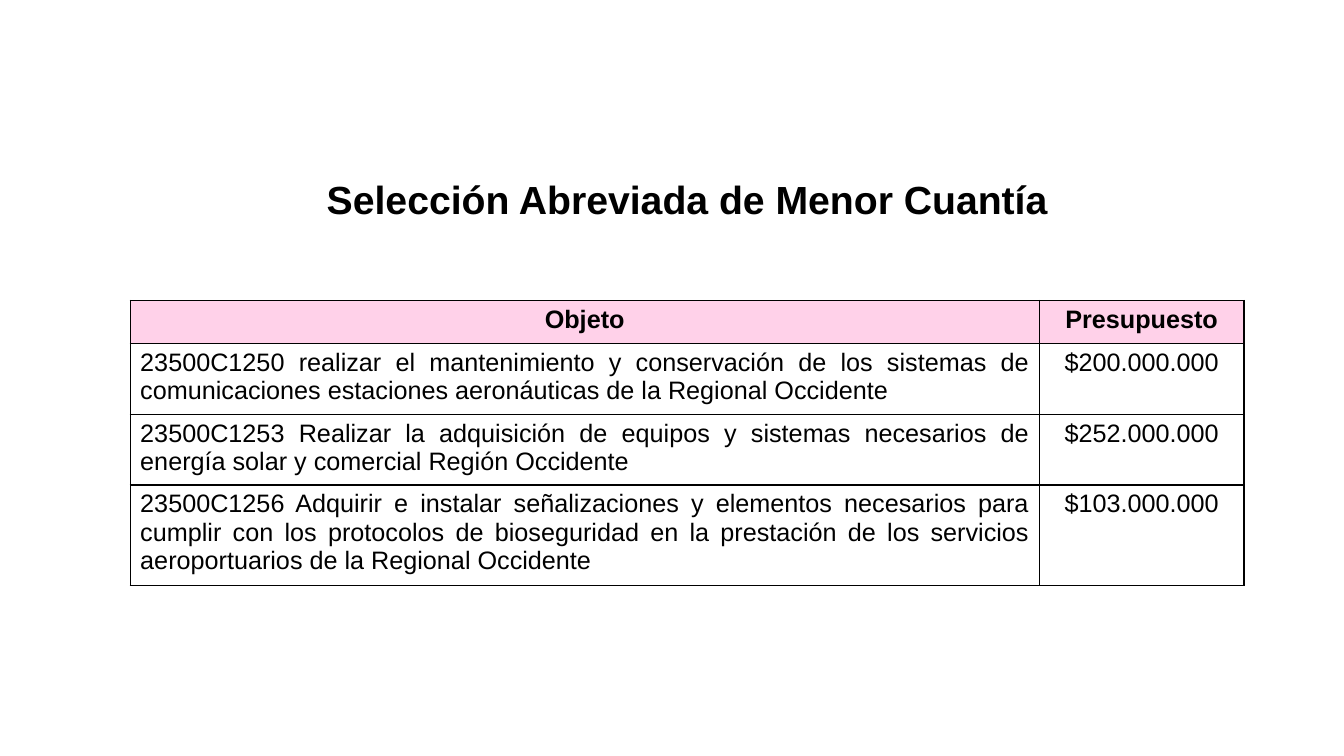
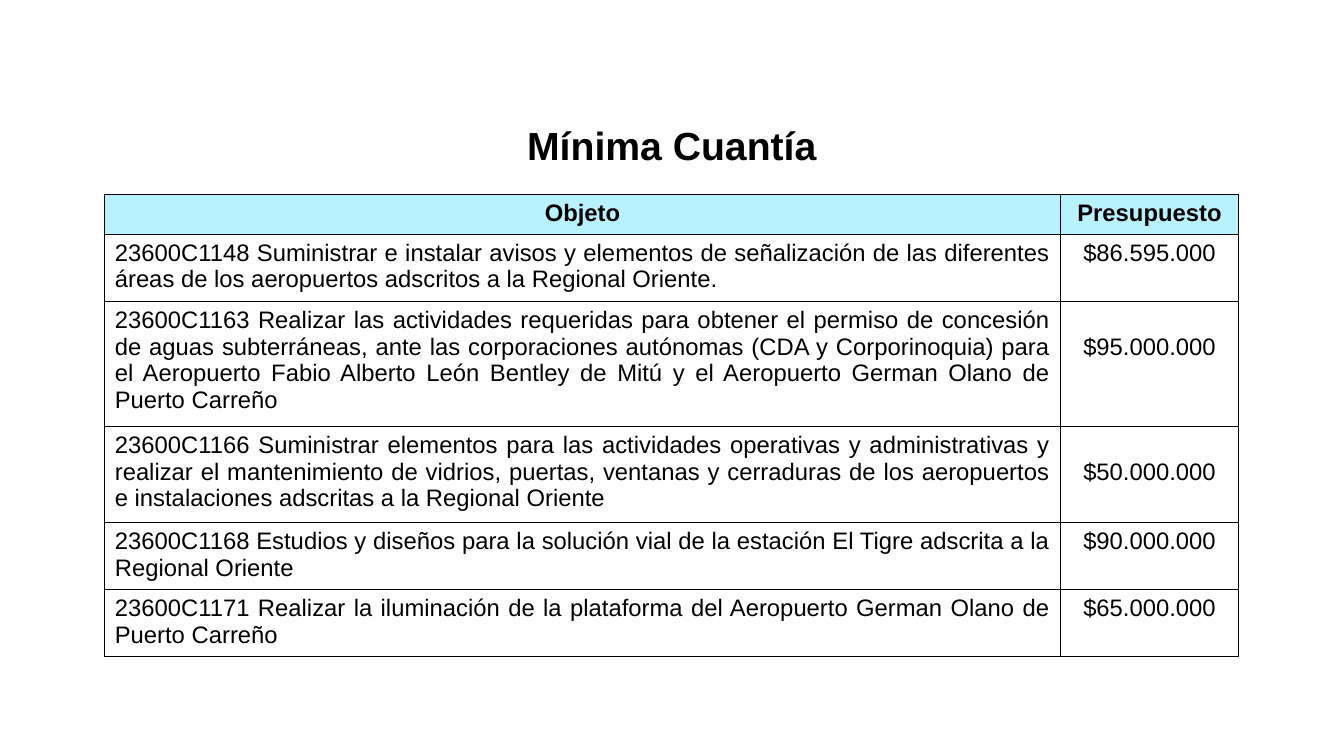
from lxml.etree import SubElement
from pptx import Presentation
from pptx.dml.color import RGBColor
from pptx.enum.text import MSO_ANCHOR, MSO_AUTO_SIZE, PP_ALIGN
from pptx.oxml.ns import qn
from pptx.util import Cm, Pt

COLORS = {"text": "000000", "border": "000000", "pink": "FFD1E9", "cyan": "B9F2FF"}
FONT = "Arial"
TITLE_W, TITLE_H = 27.18, 1.45
HEADERS = ("Objeto", "Presupuesto")

ABREVIADA = [
    ("23500C1250 realizar el mantenimiento y conservación de los sistemas de "
     "comunicaciones estaciones aeronáuticas de la Regional Occidente", "$200.000.000"),
    ("23500C1253 Realizar la adquisición de equipos y sistemas necesarios de "
     "energía solar y comercial Región Occidente", "$252.000.000"),
    ("23500C1256 Adquirir e instalar señalizaciones y elementos necesarios para "
     "cumplir con los protocolos de bioseguridad en la prestación de los servicios "
     "aeroportuarios de la Regional Occidente", "$103.000.000"),
]
MINIMA = [
    ("23600C1148 Suministrar e instalar avisos y elementos de señalización de las "
     "diferentes áreas de los aeropuertos adscritos a la Regional Oriente.", "$86.595.000"),
    ("23600C1163 Realizar las actividades requeridas para obtener el permiso de "
     "concesión de aguas subterráneas, ante las corporaciones autónomas (CDA y "
     "Corporinoquia) para el Aeropuerto Fabio Alberto León Bentley de Mitú y el "
     "Aeropuerto German Olano de Puerto Carreño", "$95.000.000"),
    ("23600C1166 Suministrar elementos para las actividades operativas y "
     "administrativas y realizar el mantenimiento de vidrios, puertas, ventanas y "
     "cerraduras de los aeropuertos e instalaciones adscritas a la Regional Oriente",
     "$50.000.000"),
    ("23600C1168 Estudios y diseños para la solución vial de la estación El Tigre "
     "adscrita a la Regional Oriente", "$90.000.000"),
    ("23600C1171 Realizar la iluminación de la plataforma del Aeropuerto German "
     "Olano de Puerto Carreño", "$65.000.000"),
]


def add_text(tf, text, size, align, bold=False):
    """Write one formatted run into the first paragraph of a text frame."""
    p = tf.paragraphs[0]
    p.alignment = align
    r = p.add_run()
    r.text = text
    r.font.name, r.font.size, r.font.bold = FONT, Pt(size), bold
    r.font.color.rgb = RGBColor.from_string(COLORS["text"])


def add_borders(cell):
    """Draw a thin line on the four sides of a cell."""
    tcPr = cell._tc.get_or_add_tcPr()
    for side in ("a:lnL", "a:lnR", "a:lnT", "a:lnB"):
        ln = SubElement(tcPr, qn(side), w=str(Pt(1)))
        fill = SubElement(ln, qn("a:solidFill"))
        SubElement(fill, qn("a:srgbClr"), val=COLORS["border"])


def add_title(s, text, left, top):
    """Place the slide title in its box."""
    sp = s.shapes.title
    sp.left, sp.top, sp.width, sp.height = Cm(left), Cm(top), Cm(TITLE_W), Cm(TITLE_H)
    tf = sp.text_frame
    tf.auto_size = MSO_AUTO_SIZE.NONE
    tf.vertical_anchor = MSO_ANCHOR.MIDDLE
    add_text(tf, text, 28, PP_ALIGN.CENTER, bold=True)


def add_budget_table(s, items, left, top, cols, heights, size, color, lowered):
    """Place the table of contracts and budgets."""
    rows = [HEADERS, *items]
    frame = s.shapes.add_table(len(rows), len(cols), Cm(left), Cm(top),
                               Cm(sum(cols)), Cm(sum(heights)))
    table = frame.table
    table.first_row = table.horz_banding = False
    for col, width in zip(table.columns, cols):
        col.width = Cm(width)
    for i, (values, height) in enumerate(zip(rows, heights)):
        table.rows[i].height = Cm(height)
        for j, value in enumerate(values):
            cell = table.cell(i, j)
            add_borders(cell)
            if i == 0:
                cell.fill.solid()
                cell.fill.fore_color.rgb = RGBColor.from_string(COLORS[color])
            else:
                cell.fill.background()
            if j == 1 and i in lowered:
                cell.margin_top = Cm(0.81)
            align = PP_ALIGN.JUSTIFY if i and j == 0 else PP_ALIGN.CENTER
            add_text(cell.text_frame, value, size, align, bold=i == 0)


def add_budget_slide(prs, title, items, box, table_offset, cols, heights, size, color,
                     lowered=()):
    """Build a slide with a title centred over a budget table."""
    s = prs.slides.add_slide(prs.slide_layouts[5])
    left, top = box
    add_title(s, title, left + (sum(cols) - TITLE_W) / 2, top)
    add_budget_table(s, items, left, top + table_offset, cols, heights, size, color, lowered)


def main():
    """Build and save the presentation."""
    prs = Presentation()
    prs.slide_width, prs.slide_height = Cm(33.87), Cm(19.05)
    add_budget_slide(prs, "Selección Abreviada de Menor Cuantía", ABREVIADA,
                     box=(3.28, 4.29), table_offset=3.28, cols=(22.91, 5.16),
                     heights=(1.09, 1.78, 1.78, 2.54), size=18, color="pink")
    add_budget_slide(prs, "Mínima Cuantía", MINIMA,
                     box=(2.64, 2.92), table_offset=1.98, cols=(24.08, 4.5),
                     heights=(1.01, 1.69, 3.15, 2.42, 1.69, 1.69), size=17, color="cyan",
                     lowered=(2, 3))
    prs.save("out.pptx")


if __name__ == "__main__":
    main()
